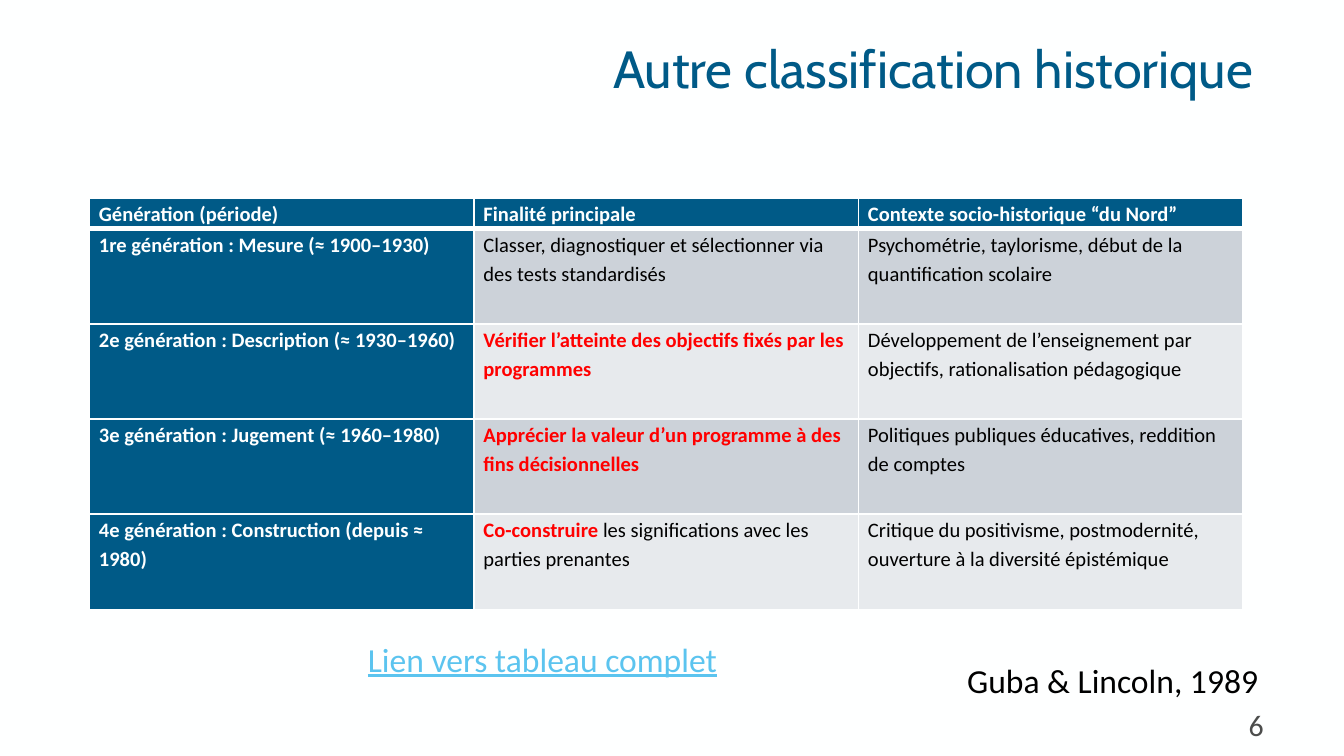
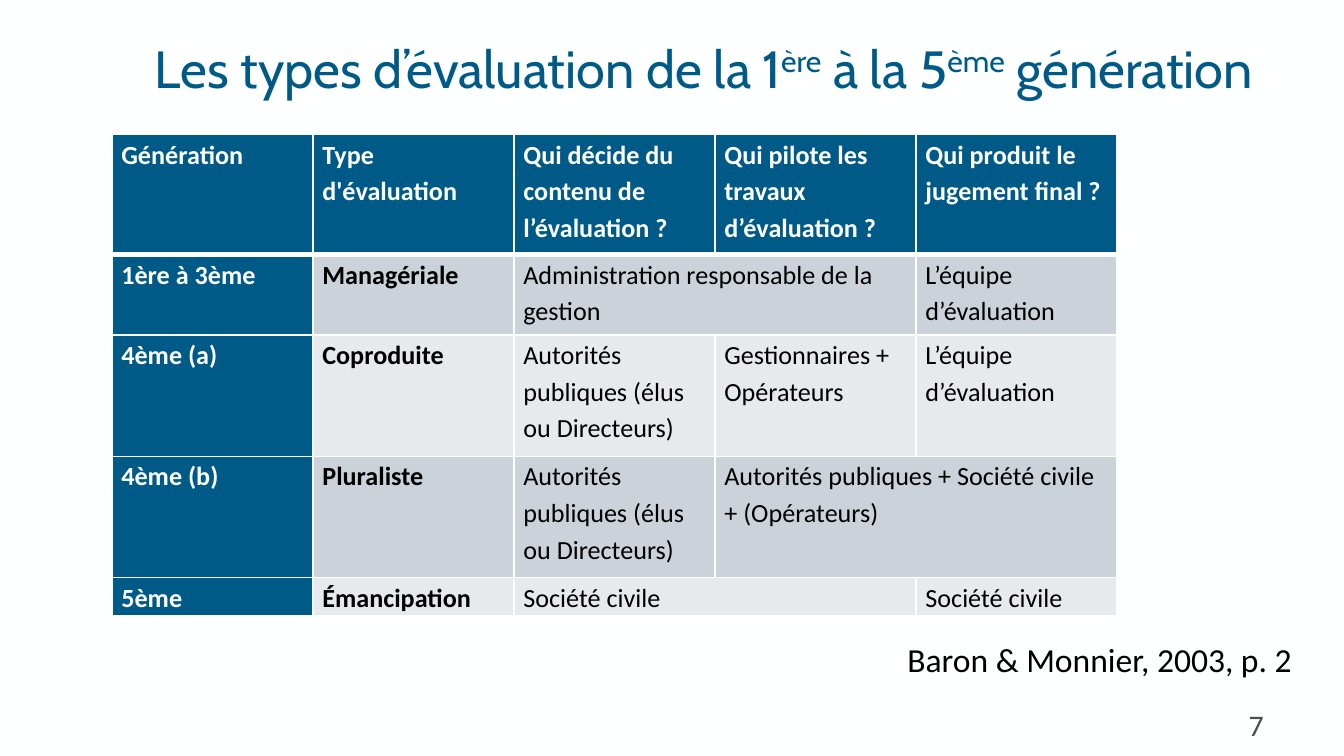
"""Build two slides on the generations of evaluation."""
from dataclasses import dataclass
from typing import Optional, Union

from lxml import etree
from pptx import Presentation
from pptx.dml.color import RGBColor
from pptx.enum import text as tx
from pptx.oxml import ns
from pptx.util import Pt


@dataclass(frozen=True)
class Theme:
    paper: str = "FEFFFF"
    blue: str = "005A87"
    dark: str = "CCD2D9"
    light: str = "E7EAED"
    ink: str = "000000"
    red: str = "FF0000"
    sky: str = "5BC4EF"
    grey: str = "4C4D4C"
    head: str = "Cabin"
    body: str = "Calibri"
    title: float = 28
    note: float = 18
    folio: float = 16
    thin: float = 1
    thick: float = 3


THEME = Theme()


@dataclass(frozen=True)
class Run:
    text: str
    color: Optional[str] = None
    bold: Optional[bool] = None
    sup: bool = False


Words = Union[str, tuple[Run, ...]]


@dataclass(frozen=True)
class Box:
    left: float
    top: float
    width: float
    height: float


@dataclass(frozen=True)
class Note:
    text: str
    box: Box
    color: str = THEME.ink
    under: bool = False


@dataclass(frozen=True)
class Grid:
    left: float
    top: float
    width: float
    rows: tuple[float, ...]
    size: float
    cells: tuple[tuple[Optional[Words], ...], ...]
    bold: tuple[int, ...] = (0,)


@dataclass(frozen=True)
class Page:
    folio: str
    title: Words
    box: Box
    grid: Grid
    notes: tuple[Note, ...]


def red(text: str) -> Run:
    """Return a bold red run."""
    return Run(text, THEME.red, True)


def put(frame, words: Words, *, size: float, color: str, font: str = THEME.body,
        bold: bool = False, under: bool = False, align=tx.PP_ALIGN.LEFT,
        line: Optional[float] = None, after: float = 0) -> None:
    """Write the words as one formatted paragraph."""
    para = frame.paragraphs[0]
    para.alignment = align
    para.space_after = Pt(after)
    if line:
        para.line_spacing = line
    for part in (Run(words),) if isinstance(words, str) else words:
        run = para.add_run()
        run.text = part.text
        face = run.font
        face.name, face.size = font, Pt(size)
        face.bold = bold if part.bold is None else part.bold
        face.underline = under
        face.color.rgb = RGBColor.from_string(part.color or color)
        if part.sup:
            run._r.get_or_add_rPr().set("baseline", "30000")


def place(shape, box: Box) -> None:
    """Move and size a shape."""
    shape.left, shape.top = Pt(box.left), Pt(box.top)
    shape.width, shape.height = Pt(box.width), Pt(box.height)


def edge(cell, **sides: float) -> None:
    """Give a cell its borders, by side and width."""
    props = cell._tc.get_or_add_tcPr()
    for side, width in sides.items():
        line = etree.SubElement(props, ns.qn(f"a:ln{side}"), w=str(Pt(width)))
        fill = etree.SubElement(line, ns.qn("a:solidFill"))
        etree.SubElement(fill, ns.qn("a:srgbClr"), val=THEME.paper)


def add_title(slide, page: Page) -> None:
    """Format the title placeholder."""
    shape = slide.shapes.title
    place(shape, page.box)
    frame = shape.text_frame
    frame.auto_size = tx.MSO_AUTO_SIZE.NONE
    frame.vertical_anchor = tx.MSO_ANCHOR.MIDDLE
    frame.margin_left = frame.margin_right = Pt(5)
    frame.margin_top = frame.margin_bottom = Pt(3)
    put(frame, page.title, size=THEME.title, color=THEME.blue,
        font=THEME.head, align=tx.PP_ALIGN.RIGHT)


def add_note(slide, note: Note) -> None:
    """Add a line of text below the table."""
    frame = slide.shapes.add_textbox(0, 0, 0, 0)
    place(frame, note.box)
    frame = frame.text_frame
    frame.word_wrap = False
    frame.auto_size = tx.MSO_AUTO_SIZE.SHAPE_TO_FIT_TEXT
    put(frame, note.text, size=THEME.note, color=note.color, under=note.under)


def add_folio(slide, text: str) -> None:
    """Add the page number."""
    shape = slide.shapes.add_textbox(0, 0, 0, 0)
    place(shape, Box(516, 375, 168, 21.6))
    shape.text_frame.word_wrap = True
    put(shape.text_frame, text, size=THEME.folio, color=THEME.grey,
        align=tx.PP_ALIGN.RIGHT)


def add_grid(slide, grid: Grid) -> None:
    """Add a table; an empty entry joins the cell on its left."""
    count = len(grid.cells[0])
    table = slide.shapes.add_table(
        len(grid.rows), count, Pt(grid.left), Pt(grid.top),
        Pt(grid.width * count), Pt(sum(grid.rows))).table
    for col in table.columns:
        col.width = Pt(grid.width)
    for i, (high, words) in enumerate(zip(grid.rows, grid.cells)):
        table.rows[i].height = Pt(high)
        for j, word in enumerate(words):
            cell = table.cell(i, j)
            blue = i == 0 or j == 0
            edge(cell, L=THEME.thin, R=THEME.thin,
                 T=THEME.thick if i == 1 else THEME.thin,
                 B=THEME.thick if i == 0 else THEME.thin)
            tint = THEME.blue if blue else THEME.dark if i % 2 else THEME.light
            cell.fill.solid()
            cell.fill.fore_color.rgb = RGBColor.from_string(tint)
            cell.margin_left = cell.margin_right = Pt(5)
            cell.margin_top = cell.margin_bottom = 0
            if word is None:
                table.cell(i, j - 1).merge(cell)
                continue
            put(cell.text_frame, word, size=grid.size,
                color=THEME.paper if blue else THEME.ink,
                bold=i == 0 or j in grid.bold, line=1.15, after=10)


ERAS = Grid(48, 106, 206, (16.5,) + (51,) * 4, 11, (
    ("Génération (période)", "Finalité principale",
     "Contexte socio-historique “du Nord”"),
    ("1re génération : Mesure (≈ 1900–1930)",
     "Classer, diagnostiquer et sélectionner via des tests standardisés",
     "Psychométrie, taylorisme, début de la quantification scolaire"),
    ("2e génération : Description (≈ 1930–1960)",
     (red("Vérifier l’atteinte des objectifs fixés par les programmes"),),
     "Développement de l’enseignement par objectifs, rationalisation pédagogique"),
    ("3e génération : Jugement (≈ 1960–1980)",
     (red("Apprécier la valeur d’un programme à des fins décisionnelles"),),
     "Politiques publiques éducatives, reddition de comptes"),
    ("4e génération : Construction (depuis ≈ 1980)",
     (red("Co-construire"), Run(" les significations avec les parties prenantes")),
     "Critique du positivisme, postmodernité, ouverture à la diversité épistémique"),
))

TYPES = Grid(60, 72, 107.7, (64.5, 43, 65, 65, 20.5), 14, (
    ("Génération", "Type d'évaluation", "Qui décide du contenu de l’évaluation ?",
     "Qui pilote les travaux d’évaluation ?", "Qui produit le jugement final ?"),
    ("1ère à 3ème", "Managériale", "Administration responsable de la gestion",
     None, "L’équipe d’évaluation"),
    ("4ème (a)", "Coproduite", "Autorités publiques (élus ou Directeurs)",
     "Gestionnaires + Opérateurs", "L’équipe d’évaluation"),
    ("4ème (b)", "Pluraliste", "Autorités publiques (élus ou Directeurs)",
     "Autorités publiques + Société civile + (Opérateurs)", None),
    ("5ème", "Émancipation", "Société civile", None, "Société civile"),
), bold=(0, 1))

PAGES = (
    Page("6", "Autre classification historique", Box(206.5, 15, 469.5, 42.5), ERAS, (
        Note("Guba & Lincoln, 1989", Box(511, 350, 173, 29)),
        Note("Lien vers tableau complet", Box(190, 338.5, 204, 29), THEME.sky, True),
    )),
    Page("7", (Run("Les types d’évaluation de la 1"), Run("ère", sup=True),
               Run(" à la 5"), Run("ème", sup=True), Run(" génération")),
         Box(14, 15, 662, 42.5), TYPES,
         (Note("Baron & Monnier, 2003, p. 2", Box(479, 338.5, 223, 29)),)),
)


def main() -> None:
    """Build and save the slides."""
    deck = Presentation()
    deck.slide_width, deck.slide_height = Pt(720), Pt(405)
    back = deck.slide_master.background.fill
    back.solid()
    back.fore_color.rgb = RGBColor.from_string(THEME.paper)
    for page in PAGES:
        slide = deck.slides.add_slide(deck.slide_layouts[5])
        add_folio(slide, page.folio)
        add_title(slide, page)
        add_grid(slide, page.grid)
        for note in page.notes:
            add_note(slide, note)
    deck.save("out.pptx")


if __name__ == "__main__":
    main()
